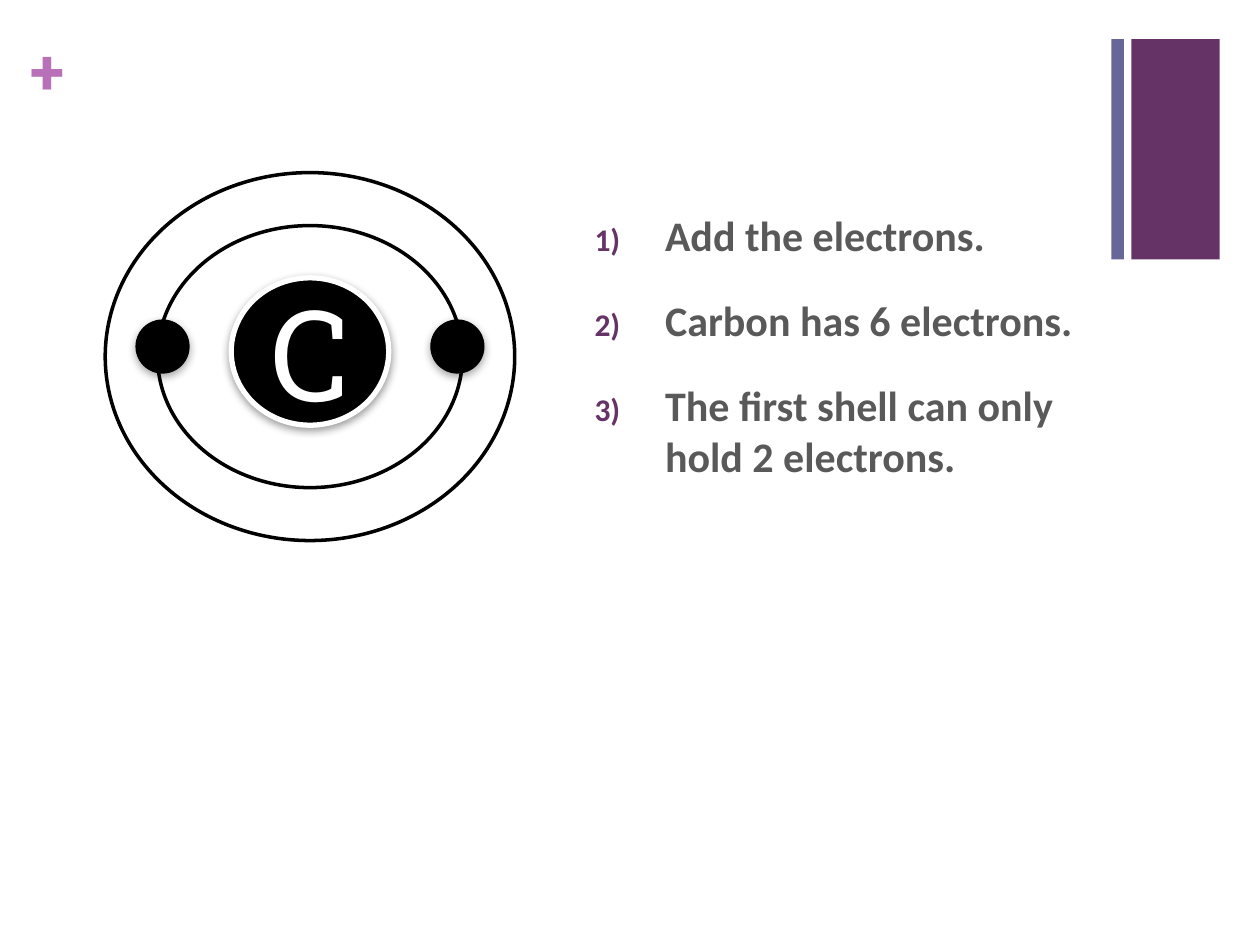
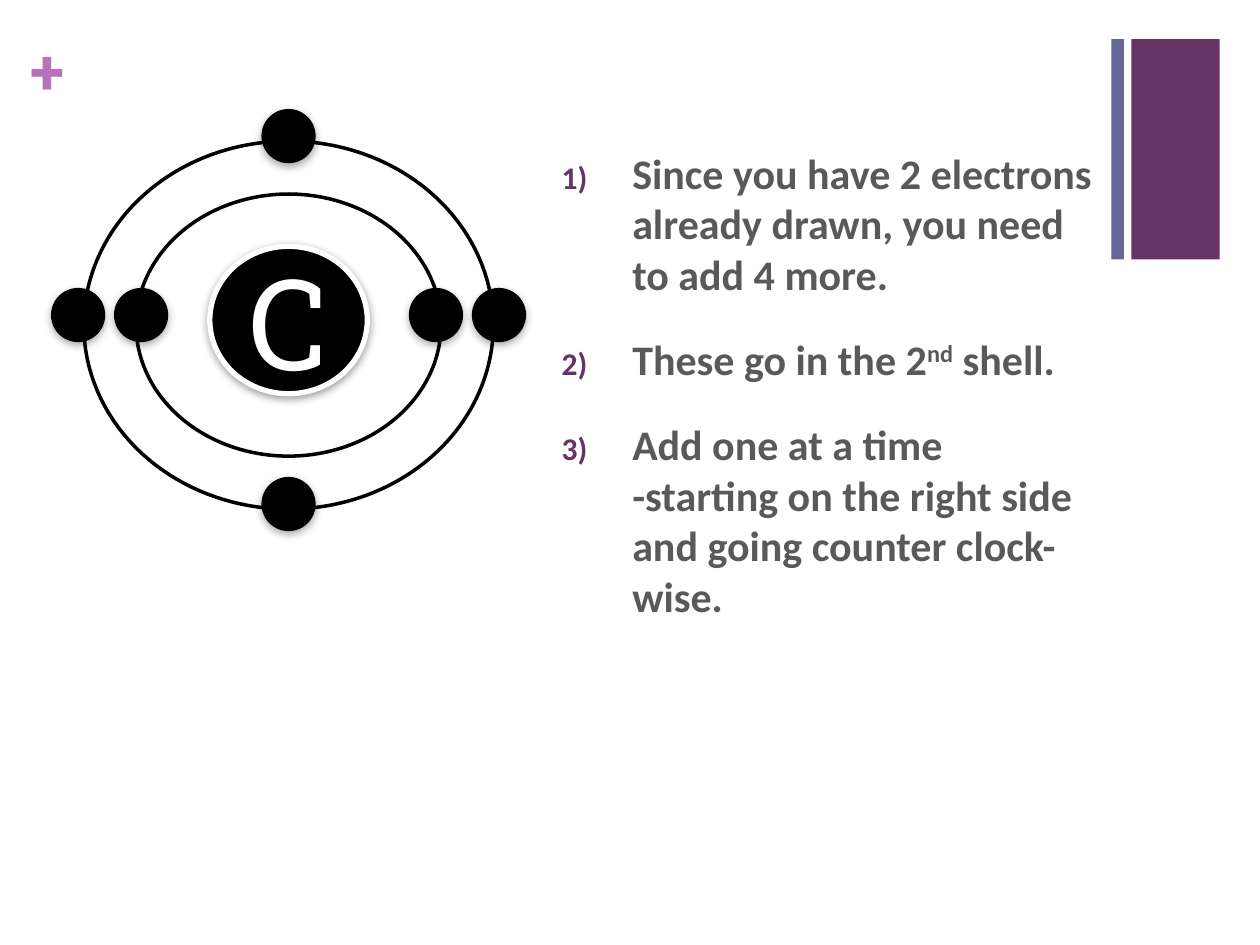
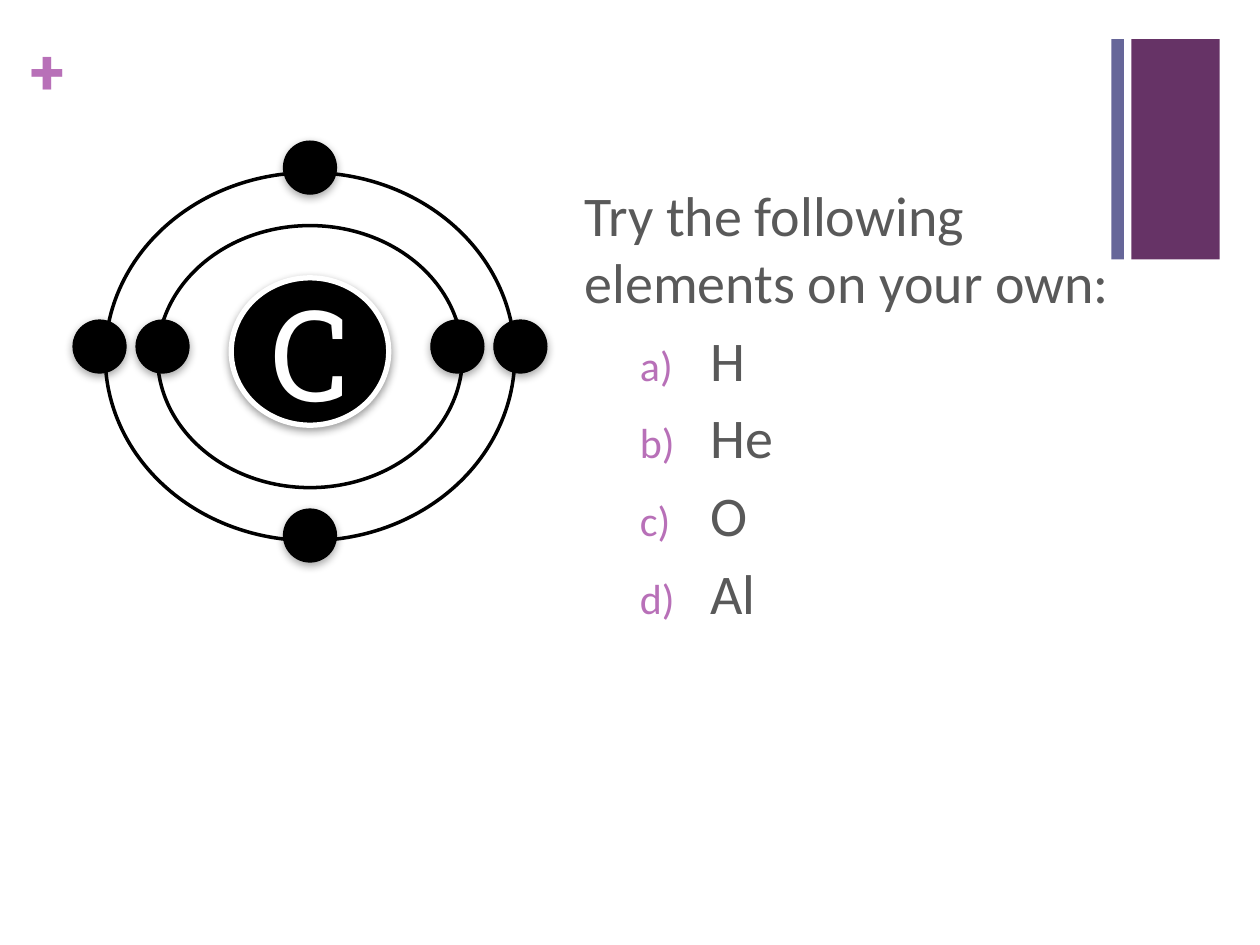
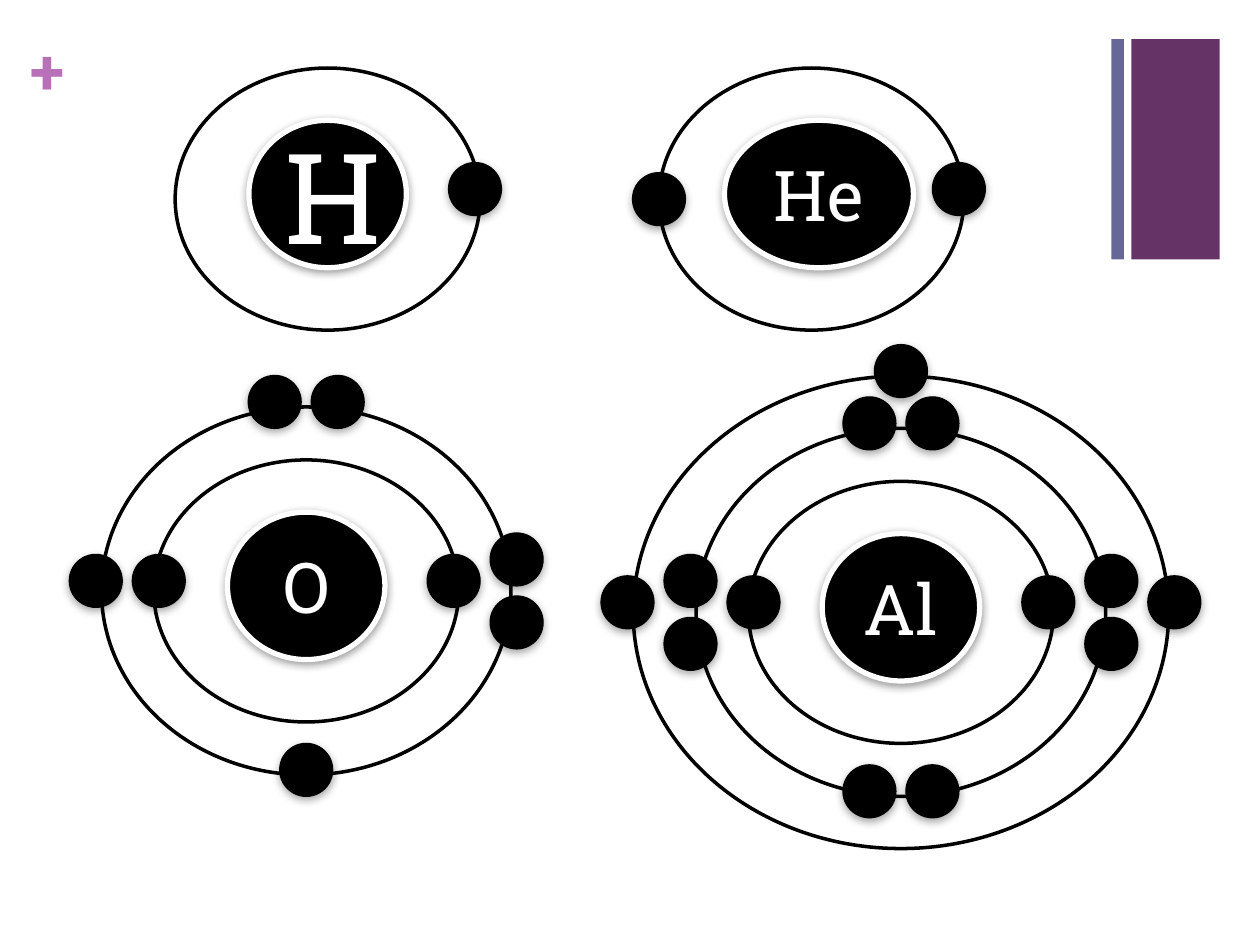
"""Build four slides on drawing the electron shells of atoms."""
import dataclasses

import pptx
import pptx.dml.color
import pptx.enum.shapes
import pptx.enum.text
import pptx.oxml
import pptx.oxml.ns
import pptx.util

Inches = pptx.util.Inches
Pt = pptx.util.Pt
Shape = pptx.enum.shapes.MSO_SHAPE


@dataclasses.dataclass(frozen=True)
class Theme:
    plum: str = "663366"
    slate: str = "666699"
    orchid: str = "B870B8"
    gray: str = "595959"
    black: str = "000000"
    white: str = "FFFFFF"
    slab: str = "Roboto Slab"
    sans: str = "Calibri"
    symbol: int = 72
    small: int = 40
    plus: int = 36
    lead: int = 32
    note: int = 24


def color(code):
    return pptx.dml.color.RGBColor.from_string(code)


def child(tag, **values):
    node = pptx.oxml.parse_xml(f"<a:{tag} {pptx.oxml.ns.nsdecls('a')}/>")
    for name, value in values.items():
        node.set(name, str(value))
    return node


class Deck:
    SHELLS = ((2.42, 2.08), (3.25, 2.92), (4.25, 3.75))
    DOT = 0.42
    LIFT = 0.04

    def __init__(self):
        self.theme = Theme()
        self.file = pptx.Presentation()
        self.file.slide_width = Inches(10)
        self.file.slide_height = Inches(7.5)
        self.slide = None

    def page(self):
        theme = self.theme
        self.slide = self.file.slides.add_slide(self.file.slide_layouts[6])
        self.shape(Shape.RECTANGLE, 9.33, 1.185, 0.7, 1.75, theme.plum)
        self.shape(Shape.RECTANGLE, 8.87, 1.185, 0.1, 1.75, theme.slate)
        frame = self.box(0.24, 0.25, 0.29, 0.61)
        frame.margin_left = frame.margin_right = 0
        frame.margin_top = frame.margin_bottom = 0
        frame.auto_size = pptx.enum.text.MSO_AUTO_SIZE.SHAPE_TO_FIT_TEXT
        frame.text = "+"
        self.font(frame.paragraphs[0], theme.plus, theme.slab, theme.orchid, True)

    def shape(self, kind, x, y, width, height, fill, line=None, weight=0):
        """Draw a shape centred on x, y."""
        item = self.slide.shapes.add_shape(
            kind, Inches(x - width / 2), Inches(y - height / 2),
            Inches(width), Inches(height))
        item.shadow.inherit = False
        item.fill.solid()
        item.fill.fore_color.rgb = color(fill)
        if line:
            item.line.color.rgb = color(line)
            item.line.width = Pt(weight)
        else:
            item.line.fill.background()
        return item

    def shade(self, item, alpha, drop):
        glow = child("outerShdw", blurRad=Pt(5), dist=Pt(drop),
                     dir=90 * 60000, rotWithShape=0)
        tint = child("srgbClr", val=self.theme.black)
        tint.append(child("alpha", val=alpha * 1000))
        glow.append(tint)
        item._element.spPr.find(pptx.oxml.ns.qn("a:effectLst")).append(glow)

    def box(self, left, top, width, height):
        frame = self.slide.shapes.add_textbox(
            Inches(left), Inches(top), Inches(width), Inches(height)).text_frame
        frame.word_wrap = True
        return frame

    def font(self, para, size, face, tint, bold=False):
        for run in para.runs:
            run.font.size = Pt(size)
            run.font.name = face
            run.font.bold = bold
            run.font.color.rgb = color(tint)

    def bullet(self, para, style, tint, left):
        props = para._p.get_or_add_pPr()
        props.set("marL", str(Inches(left)))
        props.set("indent", str(Inches(-0.56)))
        for node in (child("buClr"), child("buSzPct", val=75000),
                     child("buAutoNum", type=style)):
            props.append(node)
        props.find(pptx.oxml.ns.qn("a:buClr")).append(child("srgbClr", val=tint))

    def add(self, frame, text, gap):
        """Append a paragraph, raising the text between carets."""
        first = frame.paragraphs[0]
        para = frame.add_paragraph() if first.runs else first
        head, *rest = text.split("^")
        para.text = head
        for part in rest:
            para.add_run().text = part
        for run in para.runs[1::2] if rest else ():
            run.font._element.set("baseline", "30000")
        para.space_before = Pt(gap)
        return para

    def steps(self, left, top, height, lines):
        theme = self.theme
        frame = self.box(left, top, 4.42, height)
        for line in lines:
            para = self.add(frame, line, 20)
            self.font(para, theme.note, theme.sans, theme.gray, True)
            self.bullet(para, "arabicParenR", theme.plum, 0.56)

    def tasks(self, left, top, height, lead, lines):
        theme = self.theme
        frame = self.box(left, top, 4.42, height)
        para = self.add(frame, lead, 20)
        self.font(para, theme.lead, theme.sans, theme.gray)
        for line in lines:
            para = self.add(frame, line, 6)
            para.level = 1
            self.font(para, theme.lead, theme.sans, theme.gray)
            self.bullet(para, "alphaLcParenR", theme.orchid, 1)

    def rings(self, x, y, count):
        theme = self.theme
        for width, height in reversed(self.SHELLS[:count]):
            self.shape(Shape.OVAL, x, y, width, height, theme.white, theme.black, 2)

    def core(self, x, y, symbol, size, width=1.25):
        theme = self.theme
        item = self.shape(Shape.OVAL, x, y - self.LIFT, width, 1.17,
                          theme.black, theme.white, 3)
        self.shade(item, 38, 1.6)
        frame = item.text_frame
        frame.text = symbol
        frame.vertical_anchor = pptx.enum.text.MSO_ANCHOR.MIDDLE
        para = frame.paragraphs[0]
        para.alignment = pptx.enum.text.PP_ALIGN.CENTER
        self.font(para, size, theme.slab, theme.white)

    def dot(self, x, y):
        black = self.theme.black
        self.shade(self.shape(Shape.OVAL, x, y, self.DOT, self.DOT,
                              black, black, 0.75), 35, 1.8)

    def dots(self, x, y, *shells):
        """Place electrons; each shell lists sides, a doubled letter is a pair."""
        for index, sides in enumerate(shells):
            reach = 1.17 + index * 0.5
            rise = self.SHELLS[index][1] / 2
            for side in sides.split():
                pair = len(side) == 2
                for shift in (-0.25, 0.25) if pair else (0,):
                    if side[0] in "EW":
                        way = 1 if side[0] == "E" else -1
                        self.dot(x + way * reach,
                                 y + (shift if pair else -2 * self.LIFT))
                    else:
                        way = 1 if side[0] == "S" else -1
                        self.dot(x + shift, y + way * rise - self.LIFT)

    def atom(self, x, y, symbol, size, *shells):
        self.rings(x, y, len(shells))
        self.core(x, y, symbol, size)
        self.dots(x, y, *shells)


def main():
    deck = Deck()
    big, small = deck.theme.symbol, deck.theme.small

    deck.page()
    x, y = 2.46, 2.83
    deck.rings(x, y, 2)
    deck.steps(4.62, 1.61, 3.08, (
        "Add the electrons.",
        "Carbon has 6 electrons.",
        "The first shell can only hold 2 electrons."))
    deck.core(x, y, "C", big)
    deck.dots(x, y, "E W")

    deck.page()
    left, top = 2.29, 2.58
    deck.rings(left, top, 2)
    deck.steps(4.36, 1.12, 5, (
        "Since you have 2 electrons already drawn, you need to add 4 more.",
        "These go in the 2^nd^ shell.",
        "Add one at a time\v-starting on the right side and going counter clock-wise."))
    deck.core(left, top, "C", big)
    deck.dots(left, top, "E W", "E N W S")

    deck.page()
    deck.rings(x, y, 2)
    deck.tasks(4.54, 1.38, 4.08, "Try the following elements on your own:",
               ("H", "He", "O", "Al"))
    deck.core(x, y, "C", big)
    deck.dots(x, y, "E W", "E N W S")

    deck.page()
    deck.atom(2.6, 1.58, "H", big, "E")
    deck.rings(6.44, 1.58, 1)
    deck.core(6.5, 1.58, "He", small, 1.5)
    deck.dots(6.44, 1.58, "E")
    deck.dot(5.23, 1.58)
    deck.atom(2.43, 4.69, "O", small, "E W", "EE NN W S")
    deck.atom(7.15, 4.86, "Al", small, "E W", "EE NN WW SS", "E W N")

    deck.file.save("out.pptx")


if __name__ == "__main__":
    main()
